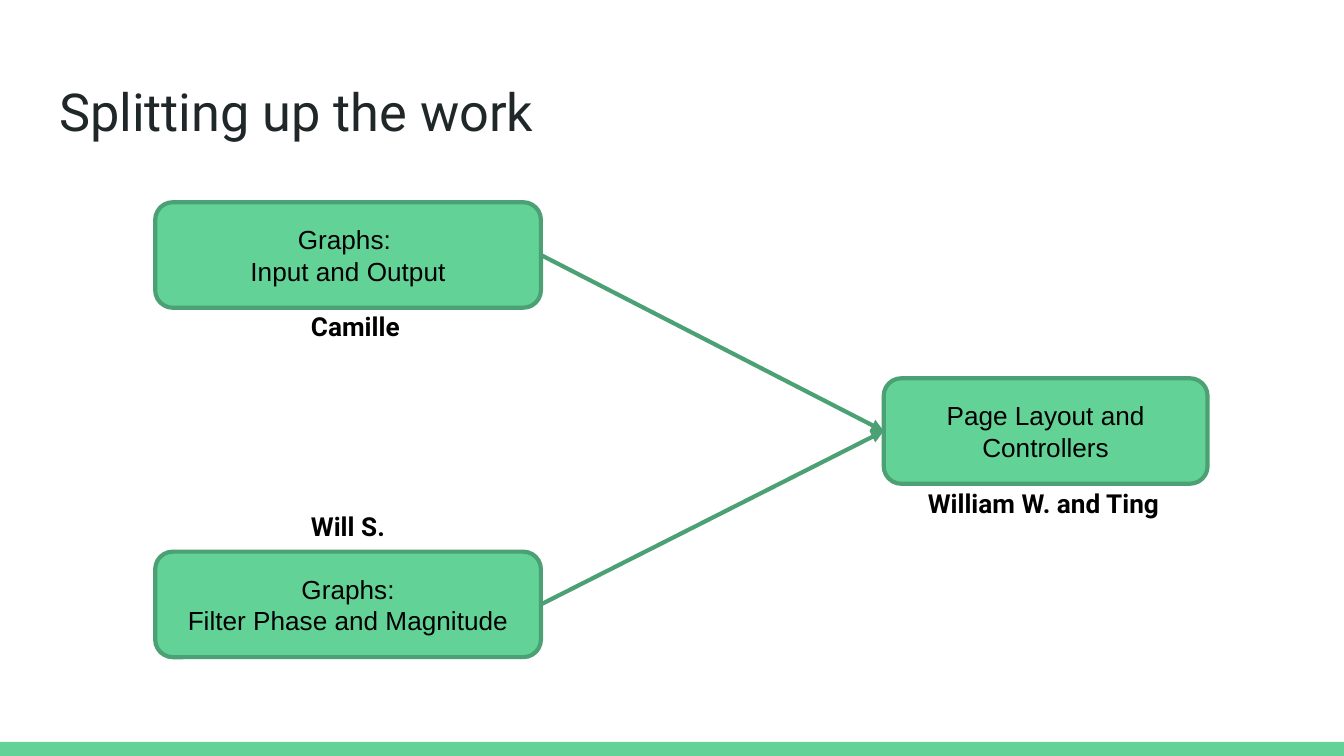
import pptx
import pptx.util
import pptx.dml.color
import pptx.enum.shapes
import pptx.enum.text
import pptx.oxml.ns
import lxml.etree

COLORS = {"green": "63D297", "edge": "4BA173", "title": "202729", "text": "000000"}
CELL = pptx.util.Inches(0.1)  # square grid of 100 columns by 56.25 rows
COLUMNS, ROWS = 100, 56.25
TASK_ROWS, OWNER_ROWS = 7.85, 5.3

TITLE_FONT = {"name": "Roboto", "size": pptx.util.Pt(28), "bold": False}
TASK_FONT = {"name": "Arial", "size": pptx.util.Pt(14), "bold": False}
OWNER_FONT = {"name": "Roboto", "size": pptx.util.Pt(14), "bold": True}
LEFT, CENTER = pptx.enum.text.PP_ALIGN.LEFT, pptx.enum.text.PP_ALIGN.CENTER
TOP, MIDDLE = pptx.enum.text.MSO_ANCHOR.TOP, pptx.enum.text.MSO_ANCHOR.MIDDLE

# Box (left, top, columns), lines, owner, owner's place in the box (left, top, columns)
WORK = {
    "signals": ((11.55, 15.05, 28.7), ["Graphs: ", "Input and Output"],
                "Camille", (10.6, 7.05, 10.9)),
    "filters": ((11.55, 41.05, 28.7), ["Graphs:", "Filter Phase and Magnitude"],
                "Will S.", (10.6, -4.05, 10.9)),
    "page": ((65.75, 28.15, 24.1), ["Page Layout and Controllers"],
             "William W. and Ting", (2.3, 7.15, 20.6)),
}


def rgb(name):
    return pptx.dml.color.RGBColor.from_string(COLORS[name])


def cells(*counts):
    return [round(count * CELL) for count in counts]


def apply(target, values):
    for name, value in values.items():
        setattr(target, name, value)


def write(shape, lines, font, color, align=LEFT, anchor=TOP):
    frame = shape.text_frame
    apply(frame, {"word_wrap": True, "vertical_anchor": anchor,
                  "margin_left": CELL, "margin_right": CELL,
                  "margin_top": CELL, "margin_bottom": CELL})
    frame.text = "\n".join(lines)
    for paragraph in frame.paragraphs:
        paragraph.alignment = align
        for run in paragraph.runs:
            apply(run.font, font)
            run.font.color.rgb = rgb(color)


def outline(part):
    part.line.color.rgb = rgb("edge")
    part.line.width = pptx.util.Pt(2.25)


def add_block(slide, kind, box):
    block = slide.shapes.add_shape(kind, *cells(*box))
    block.shadow.inherit = False
    block.fill.solid()
    block.fill.fore_color.rgb = rgb("green")
    return block


def add_footer(slide, box):
    band = add_block(slide, pptx.enum.shapes.MSO_SHAPE.RECTANGLE, box)
    band.line.fill.background()


def add_title(slide, box, heading):
    title = slide.shapes.title
    apply(title, dict(zip(("left", "top", "width", "height"), cells(*box))))
    write(title, [heading], TITLE_FONT, "title")


def add_task(slide, box, lines):
    task = add_block(slide, pptx.enum.shapes.MSO_SHAPE.ROUNDED_RECTANGLE,
                     (*box, TASK_ROWS))
    outline(task)
    write(task, lines, TASK_FONT, "text", CENTER, MIDDLE)
    return task


def add_arrow(slide, source, target):
    arrow = slide.shapes.add_connector(pptx.enum.shapes.MSO_CONNECTOR.STRAIGHT, 0, 0, 0, 0)
    arrow.begin_connect(source, 3)
    arrow.end_connect(target, 1)
    outline(arrow)
    # Arrowhead at the target, and no shadow
    properties = arrow.element.spPr
    stroke = properties.find(pptx.oxml.ns.qn("a:ln"))
    lxml.etree.SubElement(stroke, pptx.oxml.ns.qn("a:tailEnd"), type="triangle")
    lxml.etree.SubElement(properties, pptx.oxml.ns.qn("a:effectLst"))


def add_owner(slide, box, owner, place):
    left, top, columns = place
    label = slide.shapes.add_textbox(
        *cells(box[0] + left, box[1] + top, columns, OWNER_ROWS))
    write(label, [owner], OWNER_FONT, "text")


def main():
    deck = pptx.Presentation()
    deck.slide_width, deck.slide_height = cells(COLUMNS, ROWS)
    slide = deck.slides.add_slide(deck.slide_layouts[5])

    # Footer band and heading
    add_footer(slide, (0, ROWS - 1.05, COLUMNS, 1.05))
    add_title(slide, (3.4, 4.9, 93.2, 6.3), "Splitting up the work")

    # Tasks, with both graph tasks leading to the page
    tasks = {name: add_task(slide, box, lines)
             for name, (box, lines, _, _) in WORK.items()}
    for name in ("signals", "filters"):
        add_arrow(slide, tasks[name], tasks["page"])

    # Who does each task
    for box, _, owner, place in WORK.values():
        add_owner(slide, box, owner, place)

    deck.save("out.pptx")


if __name__ == "__main__":
    main()
